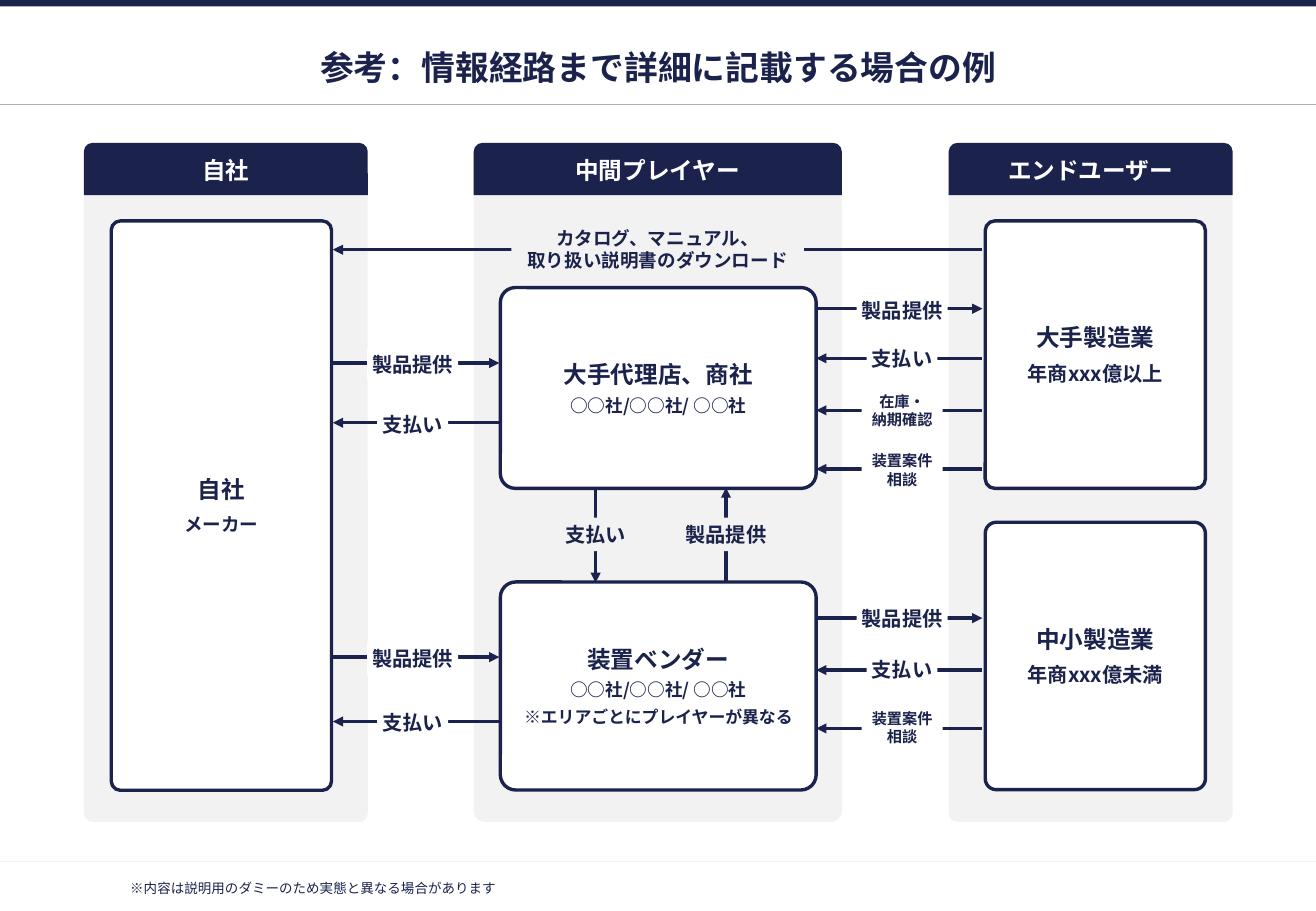
"""Builds a slide mapping product, payment and information flows between players."""
from dataclasses import dataclass

from lxml.etree import SubElement
from pptx import Presentation
from pptx.dml.color import RGBColor as RGB
from pptx.enum.shapes import MSO_CONNECTOR as Conn, MSO_SHAPE as Geo
from pptx.enum.text import MSO_ANCHOR as Anchor, PP_ALIGN as Align
from pptx.oxml.ns import qn
from pptx.shapes.autoshape import Shape
from pptx.slide import Slide
from pptx.text.text import TextFrame
from pptx.util import Pt


@dataclass(frozen=True)
class Theme:
    font: str = "Noto Sans CJK JP"
    navy: RGB = RGB(0x1B, 0x22, 0x4C)
    white: RGB = RGB(0xFF, 0xFF, 0xFF)
    panel: RGB = RGB(0xF2, 0xF2, 0xF2)
    rule: RGB = RGB(0xAF, 0xAF, 0xAF)
    title: float = 20
    heading: float = 14
    label: float = 12
    download: float = 11
    detail: float = 10.5
    remark: float = 10
    small: float = 9
    footnote: float = 8
    line_height: float = 1.185


T = Theme()


@dataclass(frozen=True)
class Run:
    text: str
    size: float
    spacing: float = 0


Lines = list[list[Run]]


@dataclass(frozen=True)
class Rect:
    x: float
    y: float
    w: float
    h: float


@dataclass(frozen=True)
class Column:
    x: float
    w: float
    heading: str


@dataclass(frozen=True)
class Player:
    rect: Rect
    corner: float
    gap: float
    lines: Lines


@dataclass(frozen=True)
class Lane:
    left: float
    right: float
    center: float


@dataclass(frozen=True)
class Flow:
    lane: Lane
    y: float
    rightward: bool
    lines: Lines
    label_dy: float = 0


def text_lines(size: float, *texts: str) -> Lines:
    """Return one single-run line per text, all of one size."""
    return [[Run(t, size)] for t in texts]


SUPPLY = text_lines(T.label, "製品提供")
PAYMENT = text_lines(T.label, "支払い")
STOCK = [[Run("在庫", T.small), Run("・", T.small, -3)], [Run("納期確認", T.small)]]
INQUIRY = text_lines(T.small, "装置案件", "相談")
DOWNLOAD = text_lines(T.download, "カタログ、マニュアル、", "取り扱い説明書のダウンロード")
COMPANIES = [Run("○○社/○○社/ ○○社", T.detail)]

COLUMNS = [
    Column(49.7, 168.3, "自社"),
    Column(280.8, 218.2, "中間プレイヤー"),
    Column(562.3, 168.3, "エンドユーザー"),
]
PLAYERS = [
    Player(Rect(66, 131, 130.5, 337.5), 0.041, 6,
           [[Run("自社", T.heading)], [Run("メーカー", T.download)]]),
    Player(Rect(296.6, 170.5, 187.2, 119), 0.074, 4,
           [[Run("大手代理店、商社", T.heading)], COMPANIES]),
    Player(Rect(296.6, 345, 187.2, 123.3), 0.074, 4,
           [[Run("装置ベンダー", T.heading)], COMPANIES,
            [Run("※エリアごとにプレイヤーが異なる", T.remark)]]),
    Player(Rect(584, 131, 130.5, 158.5), 0.043, 6,
           [[Run("大手製造業", T.heading)], [Run("年商xxx億以上", T.label)]]),
    Player(Rect(584, 309.6, 130.5, 158.5), 0.05, 6,
           [[Run("中小製造業", T.heading)], [Run("年商xxx億未満", T.label)]]),
]
MAKER_LANE = Lane(197.3, 296, 244.6)
USER_LANE = Lane(483.8, 582.3, 534.7)
FLOWS = [
    Flow(MAKER_LANE, 215.2, True, SUPPLY, 0.7),
    Flow(MAKER_LANE, 250.6, False, PAYMENT, 0.7),
    Flow(MAKER_LANE, 389.5, True, SUPPLY, 0.7),
    Flow(MAKER_LANE, 427.7, False, PAYMENT, 0.7),
    Flow(USER_LANE, 183, True, SUPPLY, 1.2),
    Flow(USER_LANE, 212.4, False, PAYMENT),
    Flow(USER_LANE, 243.2, False, STOCK),
    Flow(USER_LANE, 278, False, INQUIRY, 0.6),
    Flow(USER_LANE, 366.4, True, SUPPLY),
    Flow(USER_LANE, 397.2, False, PAYMENT, -0.4),
    Flow(USER_LANE, 431.8, False, INQUIRY, -0.6),
]


def write(tf: TextFrame, lines: Lines, color: RGB = T.navy, align: Align = Align.CENTER,
          gap: float = 0, bold: bool = True, wrap: bool = True) -> None:
    """Fill a text frame run by run."""
    tf.word_wrap = wrap
    tf.vertical_anchor = Anchor.MIDDLE
    tf.margin_left = tf.margin_right = tf.margin_top = tf.margin_bottom = Pt(3)
    for i, line in enumerate(lines):
        p = tf.add_paragraph() if i else tf.paragraphs[0]
        p.alignment = align
        p.space_after = Pt(gap)
        if len(lines) > 1:
            p.line_spacing = Pt(round(line[0].size * T.line_height, 1))
        for run in line:
            r = p.add_run()
            r.text = run.text
            r.font.size = Pt(run.size)
            r.font.bold = bold
            r.font.name = T.font
            r.font.color.rgb = color
            props = r.font._element
            SubElement(props, qn("a:ea")).set("typeface", T.font)
            if run.spacing:
                props.set("spc", str(round(run.spacing * 100)))


def add_box(s: Slide, geo: Geo, rect: Rect, fill: RGB, corner: float | None = None,
            outline: bool = False) -> Shape:
    """Add a flat filled shape."""
    sp = s.shapes.add_shape(geo, Pt(rect.x), Pt(rect.y), Pt(rect.w), Pt(rect.h))
    sp.shadow.inherit = False
    sp.fill.solid()
    sp.fill.fore_color.rgb = fill
    if corner is not None:
        sp.adjustments[0] = corner
    if outline:
        sp.line.color.rgb = T.navy
        sp.line.width = Pt(2)
    else:
        sp.line.fill.background()
    return sp


def add_text(s: Slide, rect: Rect, text: str, size: float, align: Align, bold: bool) -> None:
    """Add a one-line text box."""
    sp = s.shapes.add_textbox(Pt(rect.x), Pt(rect.y), Pt(rect.w), Pt(rect.h))
    write(sp.text_frame, text_lines(size, text), align=align, bold=bold)


def add_line(s: Slide, x1: float, y1: float, x2: float, y2: float, color: RGB = T.navy,
             width: float = 2, arrow: bool = True) -> None:
    """Add a straight line, with an arrowhead at its end if wanted."""
    c = s.shapes.add_connector(Conn.STRAIGHT, Pt(x1), Pt(y1), Pt(x2), Pt(y2))
    c.line.color.rgb = color
    c.line.width = Pt(width)
    if arrow:
        SubElement(c.line._get_or_add_ln(), qn("a:tailEnd")).set("type", "triangle")
    SubElement(c._element.spPr, qn("a:effectLst"))


def add_label(s: Slide, cx: float, cy: float, w: float, h: float, lines: Lines,
              fill: RGB) -> None:
    """Add a filled label centred on a point."""
    sp = add_box(s, Geo.RECTANGLE, Rect(cx - w / 2, cy - h / 2, w, h), fill)
    write(sp.text_frame, lines, wrap=False)


def add_flow(s: Slide, flow: Flow) -> None:
    """Add a horizontal arrow with its label."""
    lane = flow.lane
    x1, x2 = (lane.left, lane.right) if flow.rightward else (lane.right, lane.left)
    add_line(s, x1, flow.y, x2, flow.y)
    w, h = (48, 27.4) if len(flow.lines) > 1 else (T.label * len(flow.lines[0][0].text) + 6, 20)
    add_label(s, lane.center, flow.y + flow.label_dy, w, h, flow.lines, T.white)


def main() -> None:
    """Build and save the slide."""
    prs = Presentation()
    prs.slide_width, prs.slide_height = Pt(780), Pt(540)
    s = prs.slides.add_slide(prs.slide_layouts[6])

    add_line(s, 0, 510.5, 780, 510.5, T.panel, 0.75, False)
    add_box(s, Geo.RECTANGLE, Rect(0, 0, 780, 3.8), T.navy)
    add_line(s, 0, 62, 780, 62, T.rule, 0.75, False)
    add_text(s, Rect(49.7, 24.5, 681, 30.2), "参考：情報経路まで詳細に記載する場合の例",
             T.title, Align.CENTER, True)

    for col in COLUMNS:
        add_box(s, Geo.ROUNDED_RECTANGLE, Rect(col.x, 84.7, col.w, 402.5), T.panel, 0.031)
        sp = add_box(s, Geo.ROUND_2_SAME_RECTANGLE, Rect(col.x, 84.7, col.w, 31), T.navy)
        write(sp.text_frame, text_lines(T.heading, col.heading), T.white)
    for player in PLAYERS:
        sp = add_box(s, Geo.ROUNDED_RECTANGLE, player.rect, T.white, player.corner, True)
        write(sp.text_frame, player.lines, gap=player.gap)

    add_line(s, USER_LANE.right, 148, MAKER_LANE.left, 148)
    add_label(s, 389.8, 148, 173.5, 39.6, DOWNLOAD, T.panel)
    for flow in FLOWS:
        add_flow(s, flow)
    for x, y1, y2, lines in ((353, 289, 345.5, PAYMENT), (430.3, 345.5, 289, SUPPLY)):
        add_line(s, x, y1, x, y2)
        add_label(s, x, 316.8, 72.7, 20, lines, T.panel)

    add_text(s, Rect(74.2, 519.2, 566.6, 15), "※内容は説明用のダミーのため実態と異なる場合があります",
             T.footnote, Align.LEFT, False)
    prs.save("out.pptx")


if __name__ == "__main__":
    main()
